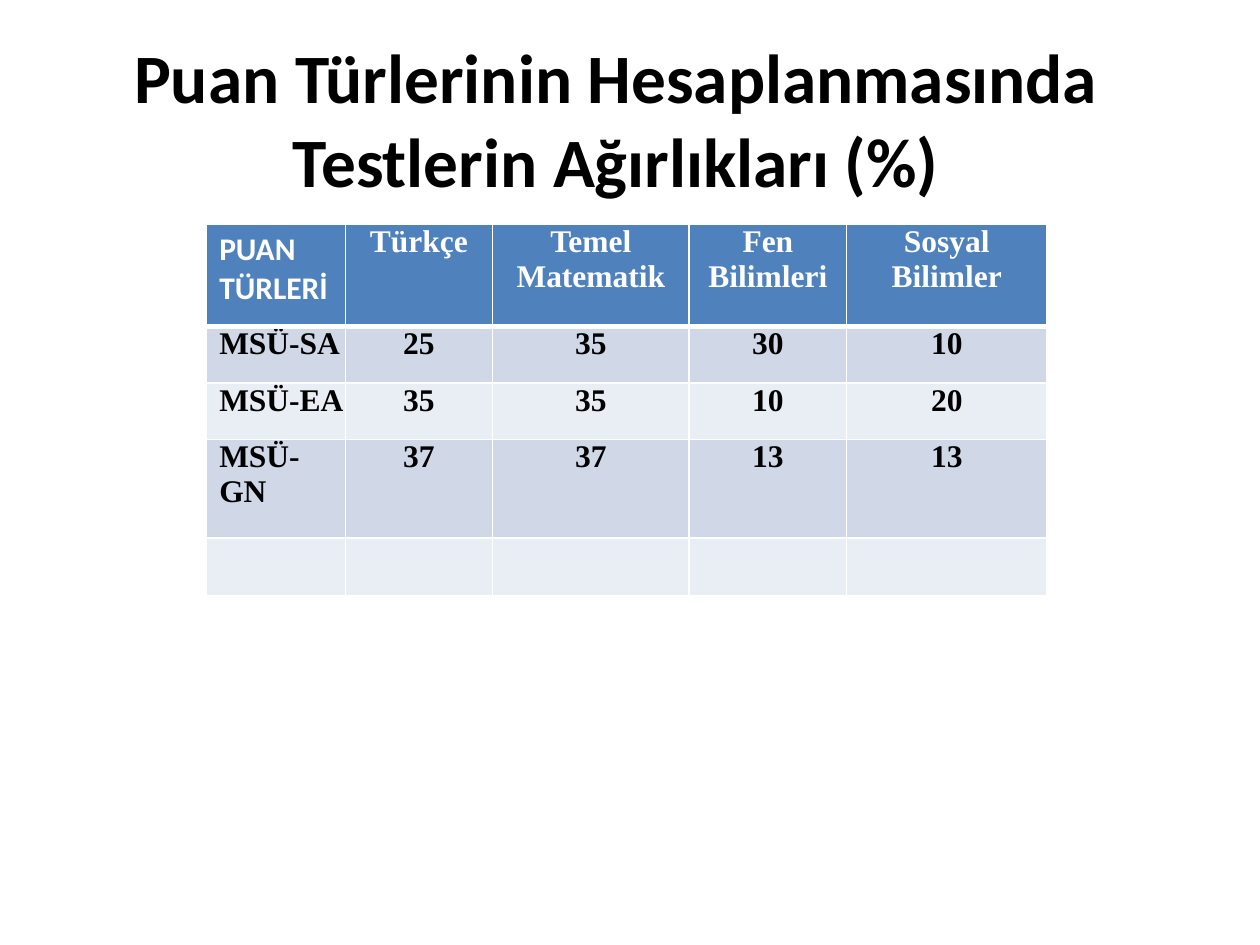
import pptx
import pptx.util
import pptx.dml.color
import pptx.enum.text
import pptx.oxml.ns
import lxml.etree

Inches = pptx.util.Inches
Pt = pptx.util.Pt
RGBColor = pptx.dml.color.RGBColor
ALIGN = pptx.enum.text.PP_ALIGN
ANCHOR = pptx.enum.text.MSO_ANCHOR
qn = pptx.oxml.ns.qn

BLACK = RGBColor(0x00, 0x00, 0x00)
WHITE = RGBColor(0xFF, 0xFF, 0xFF)
HEADER_BLUE = RGBColor(0x4F, 0x81, 0xBD)
BAND_DARK = RGBColor(0xD0, 0xD8, 0xE8)
BAND_LIGHT = RGBColor(0xE9, 0xED, 0xF4)

COLUMN_WIDTHS = [1.1, 1.17, 1.56, 1.25, 1.59]
ROW_HEIGHTS = [0.81, 0.45, 0.45, 0.78, 0.46]
COLUMN_INDENTS = [0.1, 0.18, 0.13, 0.15, 0.32]
WEIGHTS = [
    ["PUAN TÜRLERİ", "Türkçe", "Temel Matematik", "Fen Bilimleri", "Sosyal Bilimler"],
    ["MSÜ-SA", "25", "35", "30", "10"],
    ["MSÜ-EA", "35", "35", "10", "20"],
    ["MSÜ-GN", "37", "37", "13", "13"],
    [""] * 5,
]


def write_text(frame, text, size=18, font="Times New Roman", color=BLACK,
               align=ALIGN.LEFT, indent=0, right_indent=0, before=0):
    paragraph = frame.paragraphs[0]
    paragraph.alignment = align
    paragraph.space_before = Pt(before)
    properties = paragraph._p.get_or_add_pPr()
    properties.set("marL", str(Inches(indent)))
    properties.set("marR", str(Inches(right_indent)))
    properties.set("indent", "0")
    run = paragraph.add_run()
    run.text = text
    run.font.size = Pt(size)
    run.font.name = font
    run.font.bold = True
    run.font.color.rgb = color


def set_borders(cell, bottom, top):
    properties = cell._tc.get_or_add_tcPr()
    widths = {"a:lnL": 1, "a:lnR": 1, "a:lnT": top, "a:lnB": bottom}
    for position, (tag, width) in enumerate(widths.items()):
        line = lxml.etree.Element(qn(tag), w=str(Pt(width)))
        fill = lxml.etree.SubElement(line, qn("a:solidFill"))
        lxml.etree.SubElement(fill, qn("a:srgbClr"), val=str(WHITE))
        properties.insert(position, line)


def place_title(slide, left, top, width, height):
    title = slide.shapes.title
    title.left, title.top, title.width, title.height = left, top, width, height
    frame = title.text_frame
    frame.word_wrap = True
    frame.vertical_anchor = ANCHOR.MIDDLE
    write_text(frame, "Puan Türlerinin Hesaplanmasında Testlerin Ağırlıkları (%)",
               size=39.6, font="Calibri", align=ALIGN.CENTER)


def fill_cell(cell, text, row, column):
    is_header = row == 0
    is_corner = is_header and column == 0
    cell.fill.solid()
    cell.fill.fore_color.rgb = (
        HEADER_BLUE if is_header else BAND_DARK if row % 2 else BAND_LIGHT)
    set_borders(cell, bottom=3 if is_header else 1, top=3 if row == 1 else 1)
    if not text:
        return
    color = WHITE if is_header else BLACK
    if is_corner:
        write_text(cell.text_frame, text, font="Calibri", color=color)
        return
    cell.margin_left = cell.margin_right = cell.margin_top = cell.margin_bottom = 0
    indent = COLUMN_INDENTS[column]
    write_text(cell.text_frame, text, color=color, before=13.8, indent=indent,
               right_indent=indent if column else 0,
               align=ALIGN.CENTER if column else ALIGN.LEFT)


def place_weights(slide, left, top, width, height):
    table = slide.shapes.add_table(
        len(WEIGHTS), len(COLUMN_WIDTHS), left, top, width, height).table
    for column, column_width in zip(table.columns, COLUMN_WIDTHS):
        column.width = Inches(column_width)
    for row, row_height in zip(table.rows, ROW_HEIGHTS):
        row.height = Inches(row_height)
    for row, texts in enumerate(WEIGHTS):
        for column, text in enumerate(texts):
            fill_cell(table.cell(row, column), text, row, column)


def main():
    presentation = pptx.Presentation()
    presentation.slide_width = Inches(10)
    presentation.slide_height = Inches(7.5)
    slide = presentation.slides.add_slide(presentation.slide_layouts[5])
    place_title(slide, Inches(0.39), Inches(0.31), Inches(9), Inches(1.25))
    place_weights(slide, Inches(1.64), Inches(1.78),
                  Inches(sum(COLUMN_WIDTHS)), Inches(sum(ROW_HEIGHTS)))
    presentation.save("out.pptx")


if __name__ == "__main__":
    main()
